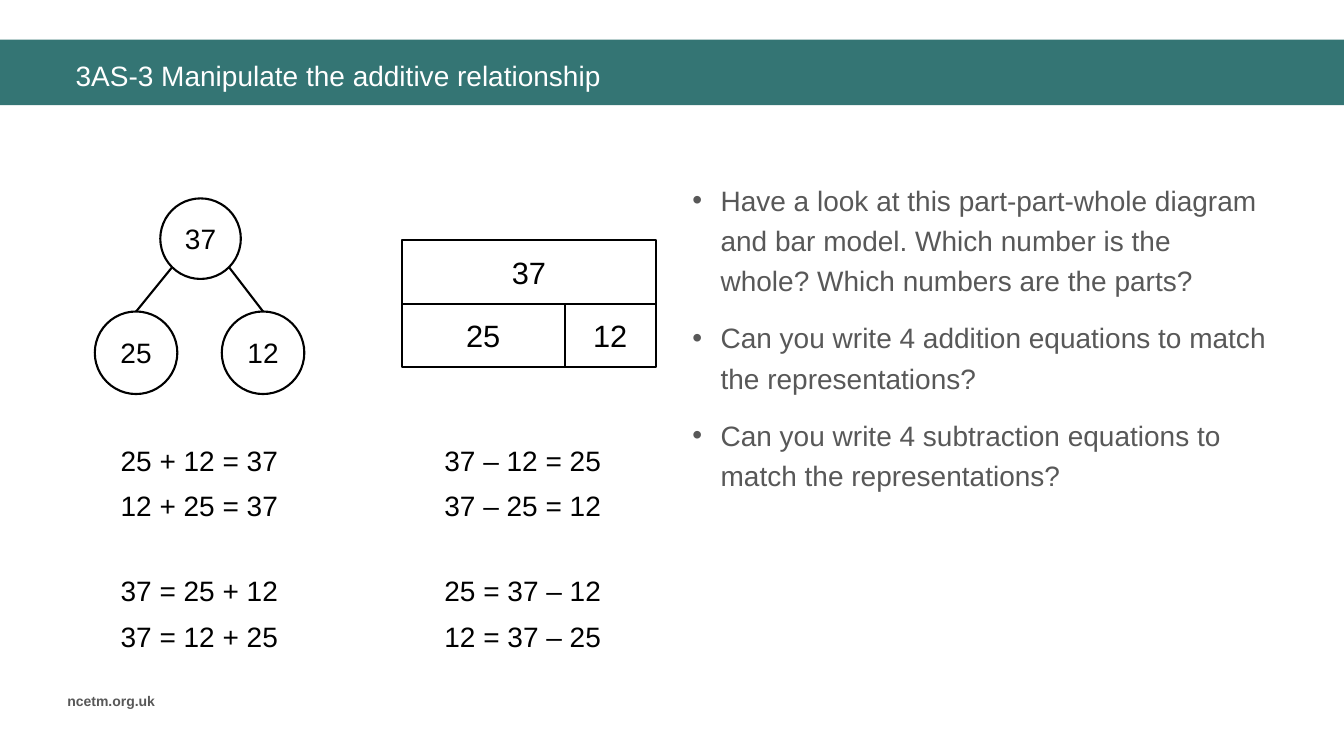
from dataclasses import dataclass

from lxml.etree import SubElement
from pptx import Presentation
from pptx.dml.color import RGBColor
from pptx.enum.shapes import MSO_CONNECTOR as Connector, MSO_SHAPE as Preset
from pptx.enum.text import MSO_ANCHOR as Anchor, MSO_AUTO_SIZE as AutoSize, PP_ALIGN as Align
from pptx.oxml.ns import qn
from pptx.util import Cm, Pt


@dataclass(frozen=True)
class Theme:
    font: str = "Arial"
    teal: str = "347574"
    grey: str = "585858"
    black: str = "000000"
    white: str = "FFFFFF"
    body: int = 20
    bar: int = 22
    footer: int = 10
    outline: float = 1.5


THEME = Theme()

EQUATIONS = [
    [["25 + 12 = 37", "12 + 25 = 37"], ["37 – 12 = 25", "37 – 25 = 12"]],
    [["37 = 25 + 12", "37 = 12 + 25"], ["25 = 37 – 12", "12 = 37 – 25"]],
]
QUESTIONS = [
    "Have a look at this part-part-whole diagram and bar model. "
    "Which number is the whole? Which numbers are the parts?",
    "Can you write 4 addition equations to match the representations?",
    "Can you write 4 subtraction equations to match the representations?",
]


def add_bullet(paragraph, color, indent):
    properties = paragraph._p.get_or_add_pPr()
    properties.set("marL", str(indent))
    properties.set("indent", str(-indent))
    bullet_color = SubElement(properties, qn("a:buClr"))
    SubElement(bullet_color, qn("a:srgbClr"), val=color)
    SubElement(properties, qn("a:buFont"), typeface=THEME.font)
    SubElement(properties, qn("a:buChar"), char="•")


def write(frame, lines, *, size=THEME.body, color=THEME.black, bold=False,
          align=Align.LEFT, anchor=Anchor.TOP, wrap=True, spacing=None,
          before=0, after=0, bullets=False):
    frame.auto_size = AutoSize.NONE
    frame.word_wrap = wrap
    frame.vertical_anchor = anchor
    for index, line in enumerate(lines):
        paragraph = frame.add_paragraph() if index else frame.paragraphs[0]
        if bullets:
            add_bullet(paragraph, color, Cm(0.71))
        paragraph.alignment = align
        paragraph.line_spacing = spacing
        paragraph.space_before = Pt(before if index else 0)
        paragraph.space_after = Pt(after)
        run = paragraph.add_run()
        run.text = line
        run.font.name = THEME.font
        run.font.size = Pt(size)
        run.font.bold = bold
        run.font.color.rgb = RGBColor.from_string(color)


def add_text(slide, left, top, width, height, lines, **text_format):
    box = slide.shapes.add_textbox(Cm(left), Cm(top), Cm(width), Cm(height))
    write(box.text_frame, lines, **text_format)


def add_outline(slide, preset, left, top, width, height, fill=None, line=THEME.black):
    shape = slide.shapes.add_shape(preset, Cm(left), Cm(top), Cm(width), Cm(height))
    shape.shadow.inherit = False
    if fill:
        shape.fill.solid()
        shape.fill.fore_color.rgb = RGBColor.from_string(fill)
    else:
        shape.fill.background()
    if line:
        shape.line.color.rgb = RGBColor.from_string(line)
        shape.line.width = Pt(THEME.outline)
    else:
        shape.line.fill.background()
    return shape


def add_line(slide, x1, y1, x2, y2):
    line = slide.shapes.add_connector(Connector.STRAIGHT, Cm(x1), Cm(y1), Cm(x2), Cm(y2))
    line.line.color.rgb = RGBColor.from_string(THEME.black)
    line.line.width = Pt(THEME.outline)
    SubElement(line._element.spPr, qn("a:effectLst"))
    return line


def add_number_circle(slide, left, top, diameter, number):
    circle = add_outline(slide, Preset.OVAL, left, top, diameter, diameter, THEME.white)
    frame = circle.text_frame
    frame.margin_left = frame.margin_right = frame.margin_top = frame.margin_bottom = 0
    write(frame, [number], align=Align.CENTER, anchor=Anchor.MIDDLE)
    return circle


def add_heading(slide):
    title = slide.shapes.title
    title.left, title.top, title.width, title.height = Cm(1.65), Cm(1.3), Cm(31.29), Cm(1.19)
    write(title.text_frame, ["3AS-3 Manipulate the additive relationship"],
          color=THEME.white, anchor=Anchor.MIDDLE)
    band = add_outline(slide, Preset.RECTANGLE, 0, 1, 33.87, 1.65, THEME.teal, line=None)
    title.element.addprevious(band.element)


def add_part_whole_diagram(slide):
    add_number_circle(slide, 4.04, 5, 2.03, "37")
    for part_left, number, branch_x in [(2.39, "25", 4.34), (5.59, "12", 5.77)]:
        part = add_number_circle(slide, part_left, 7.85, 2.08, number)
        branch = add_line(slide, branch_x, 6.73, part_left + 1.04, 7.85)
        branch.end_connect(part, 0)


def add_bar_model(slide):
    left, top, width, row = 10.13, 6.05, 6.4, 1.6
    first_part = 4.1
    middle, bottom, split = top + row, top + 2 * row, left + first_part
    bar = add_outline(slide, Preset.RECTANGLE, left, top, width, 2 * row)
    add_line(slide, split, middle, split, bottom)
    divider = add_line(slide, left, middle, left + width, middle)
    divider.begin_connect(bar, 1)
    divider.end_connect(bar, 3)
    cells = [
        (left, top, width, "37"),
        (left, middle, first_part, "25"),
        (split, middle, width - first_part, "12"),
    ]
    for cell_left, cell_top, cell_width, number in cells:
        add_text(slide, cell_left, cell_top, cell_width, row, [number],
                 size=THEME.bar, align=Align.CENTER, anchor=Anchor.MIDDLE)


def add_equations(slide):
    for row, pairs in enumerate(EQUATIONS):
        for column, pair in enumerate(pairs):
            add_text(slide, 2.79 + 8.16 * column, 10.87 + 3.3 * row, 4.5, 2.39, pair,
                     wrap=False, spacing=1.2, before=4)


def main():
    presentation = Presentation()
    presentation.slide_width, presentation.slide_height = Cm(33.87), Cm(19.05)
    slide = presentation.slides.add_slide(presentation.slide_layouts[5])
    add_heading(slide)
    add_part_whole_diagram(slide)
    add_bar_model(slide)
    add_equations(slide)
    add_text(slide, 17.2, 4.32, 14.99, 11.4, QUESTIONS, color=THEME.grey,
             spacing=1.2, before=6, after=6, bullets=True)
    add_text(slide, 1.45, 17.32, 3.07, 0.69, ["ncetm.org.uk"],
             size=THEME.footer, color=THEME.grey, bold=True, wrap=False)
    presentation.save("out.pptx")


if __name__ == "__main__":
    main()
